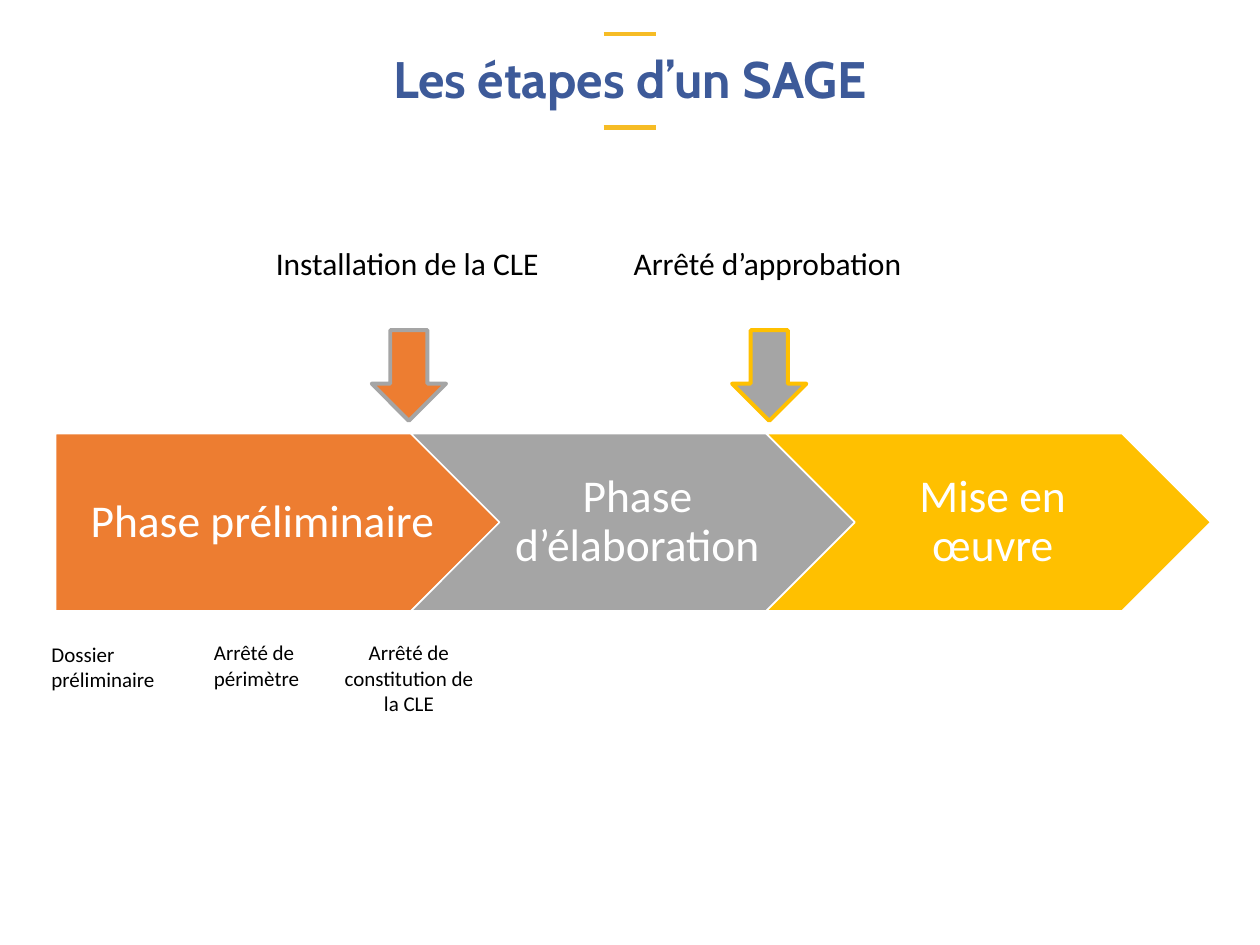
from lxml import etree
from pptx import Presentation
from pptx.dml.color import RGBColor
from pptx.enum.shapes import MSO_CONNECTOR as Connector, MSO_SHAPE as Shape
from pptx.enum.text import MSO_ANCHOR as Anchor, PP_ALIGN as Align
from pptx.oxml.ns import qn
from pptx.util import Inches, Pt

BLUE = RGBColor(0x3D, 0x5A, 0x99)
GOLD = RGBColor(0xF6, 0xBC, 0x25)
ORANGE = RGBColor(0xED, 0x7D, 0x31)
GREY = RGBColor(0xA5, 0xA5, 0xA5)
YELLOW = RGBColor(0xFF, 0xC0, 0x00)
WHITE = RGBColor(0xFF, 0xFF, 0xFF)
BLACK = RGBColor(0x00, 0x00, 0x00)


def write_text(shape, text, size, color, align=Align.LEFT, anchor=Anchor.TOP,
               margins=(0.1, 0.05, 0.1, 0.05), spacing=1.0, font="Calibri", bold=False):
    frame = shape.text_frame
    left, top, right, bottom = map(Inches, margins)
    frame_format = {"word_wrap": True, "vertical_anchor": anchor, "margin_left": left,
                    "margin_top": top, "margin_right": right, "margin_bottom": bottom}
    for name, value in frame_format.items():
        setattr(frame, name, value)
    paragraph = frame.paragraphs[0]
    paragraph.text = text
    paragraph.alignment = align
    paragraph.line_spacing = spacing
    for name, value in {"name": font, "size": Pt(size), "bold": bold}.items():
        setattr(paragraph.font, name, value)
    paragraph.font.color.rgb = color


def add_filled_shape(kind, box, fill, line, line_width):
    shape = slide.shapes.add_shape(kind, *map(Inches, box))
    shape.shadow.inherit = False
    shape.fill.solid()
    shape.fill.fore_color.rgb = fill
    shape.line.color.rgb = line
    shape.line.width = Pt(line_width)
    return shape


presentation = Presentation()
presentation.slide_width, presentation.slide_height = Inches(10), Inches(7.5)
slide = presentation.slides.add_slide(presentation.slide_layouts[6])

# Gold rules above and below the title
for y in (0.27, 1.01):
    rule = slide.shapes.add_connector(Connector.STRAIGHT, Inches(4.79), Inches(y),
                                      Inches(5.21), Inches(y))
    rule.line.color.rgb = GOLD
    rule.line.width = Pt(2.75)
    etree.SubElement(rule._element.spPr, qn("a:effectLst"))

# Title
title = slide.shapes.add_textbox(Inches(0.69), Inches(0.35), Inches(8.62), Inches(0.6))
write_text(title, "Les étapes d’un SAGE", 29.3, BLUE, Align.CENTER, Anchor.MIDDLE,
           spacing=0.9, font="Cabin", bold=True)

# Three phases, each overlapping the one before
phases = [
    ("Phase préliminaire", Shape.PENTAGON, ORANGE, 0.15),
    ("Phase d’élaboration", Shape.CHEVRON, GREY, 0.11),
    ("Mise en œuvre", Shape.CHEVRON, YELLOW, 0.11),
]
for index, (text, kind, fill, left_margin) in enumerate(phases):
    phase = add_filled_shape(kind, (0.44 + 2.82 * index, 3.44, 3.53, 1.41), fill, WHITE, 1)
    write_text(phase, text, 26, WHITE, Align.CENTER, Anchor.MIDDLE,
               (left_margin, 0.08, 0.04, 0.08), 0.9)

# Milestone arrows between phases
for x, fill, line in ((2.95, ORANGE, GREY), (5.81, GREY, YELLOW)):
    add_filled_shape(Shape.DOWN_ARROW, (x, 2.62, 0.59, 0.72), fill, line, 2.25)

# Milestone names and preliminary steps
labels = [
    ("Installation de la CLE", (2.09, 1.89, 2.32, 0.4), 18, Align.LEFT),
    ("Arrêté d’approbation", (4.93, 1.89, 2.35, 0.4), 18, Align.LEFT),
    ("Dossier préliminaire", (0.31, 5.04, 1.02, 0.5), 12, Align.LEFT),
    ("Arrêté de périmètre", (1.6, 5.03, 0.96, 0.5), 12, Align.LEFT),
    ("Arrêté de constitution de la CLE", (2.62, 5.03, 1.25, 0.71), 12, Align.CENTER),
]
for text, box, size, align in labels:
    label = slide.shapes.add_textbox(*map(Inches, box))
    write_text(label, text, size, BLACK, align)

presentation.save("out.pptx")
